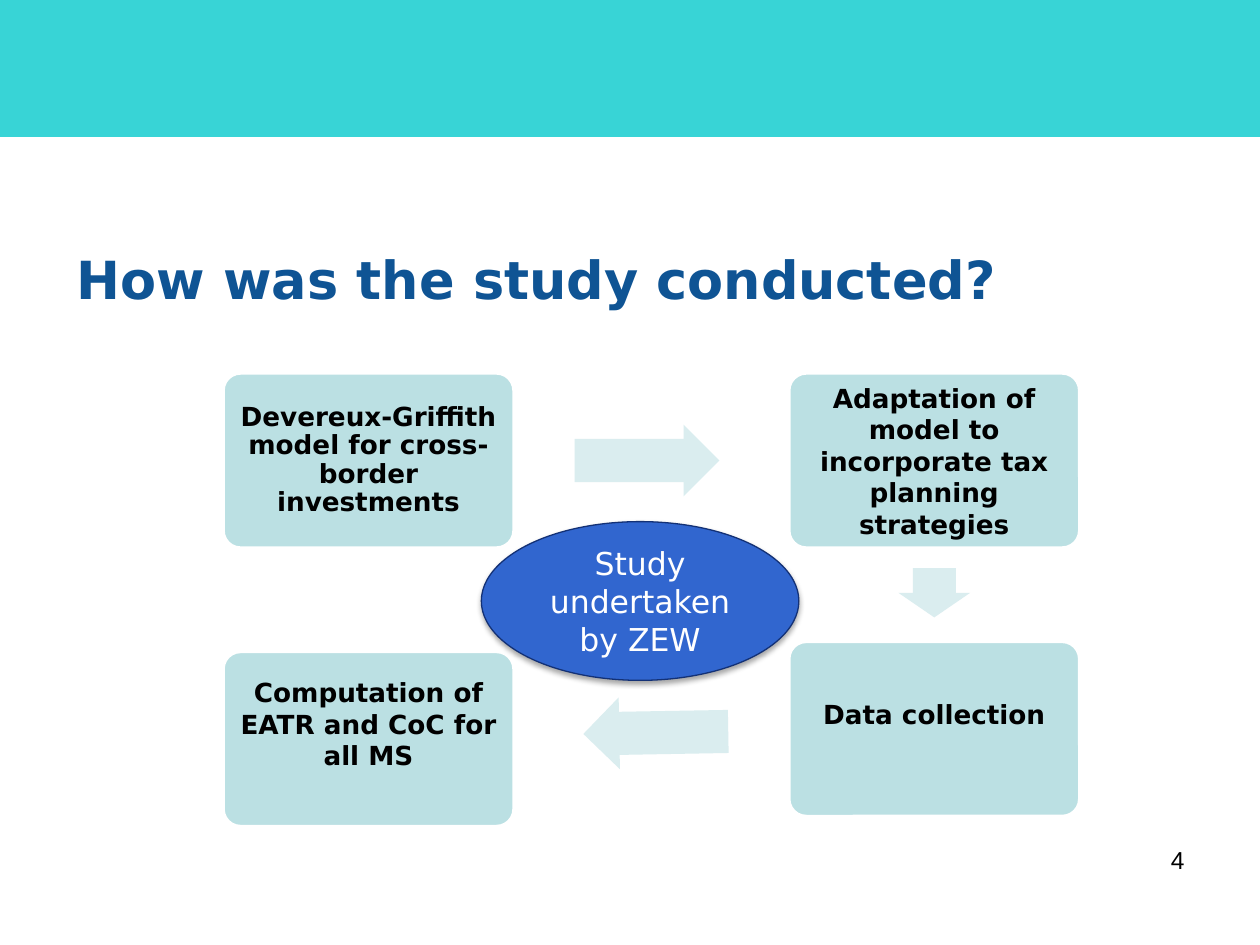
from lxml.etree import SubElement
from pptx import Presentation
from pptx.dml.color import RGBColor
from pptx.enum.shapes import MSO_SHAPE as SHAPE
from pptx.enum.text import MSO_ANCHOR as ANCHOR, PP_ALIGN as ALIGN
from pptx.oxml.ns import qn
from pptx.util import Inches, Pt

TURQUOISE = RGBColor(0x38, 0xD4, 0xD6)
TITLE_BLUE = RGBColor(0x0F, 0x54, 0x94)
BOX_TEAL = RGBColor(0xBB, 0xE0, 0xE3)
ARROW_TEAL = RGBColor(0xDA, 0xED, 0xEF)
OVAL_BLUE = RGBColor(0x31, 0x66, 0xCF)
OVAL_EDGE = RGBColor(0x13, 0x31, 0x76)
WHITE = RGBColor(0xFF, 0xFF, 0xFF)
BLACK = RGBColor(0, 0, 0)

FONT = "DejaVu Sans"
COLUMNS = (1.77, 6.26)
TOP_ROW = 2.96
BOX_W, BOX_H = 2.31, 1.39
INSET = 0.1
LIFT = 0.24  # extra bottom inset that raises the text of the lower boxes

# text, column, top, line spacing, extra bottom inset
STEPS = [
    ("Devereux-Griffith model for cross-border investments", 0, TOP_ROW, 0.9, 0),
    ("Adaptation of model to incorporate tax planning strategies", 1, TOP_ROW, 1.0, 0),
    ("Data collection", 1, 5.09, 1.0, LIFT),
    ("Computation of EATR and CoC for all MS", 0, 5.17, 1.0, LIFT),
]
# left, top, length, rotation
ARROWS = [(4.56, 3.37, 1.15, 0), (7.22, 4.42, 0.39, 90), (4.63, 5.53, 1.15, 179)]
ARROW_H = 0.57


def add_filled(slide, kind, box, fill, line=None, line_width=0.75):
    sp = slide.shapes.add_shape(kind, *map(Inches, box))
    sp.shadow.inherit = False
    sp.fill.solid()
    sp.fill.fore_color.rgb = fill
    if line is None:
        sp.line.fill.background()
    else:
        sp.line.color.rgb = line
        sp.line.width = Pt(line_width)
    return sp


def write(sp, text, size, color, align, bold=False, font=FONT):
    tf = sp.text_frame
    tf.word_wrap = True
    p = tf.paragraphs[0]
    p.alignment = align
    r = p.add_run()
    r.text = text
    r.font.size, r.font.name, r.font.bold = Pt(size), font, bold
    r.font.color.rgb = color
    return p


def add_title(slide, text):
    title = slide.shapes.title
    title.left, title.top, title.width, title.height = map(Inches, (0.51, 1.7, 9, 1.02))
    title.text_frame.vertical_anchor = ANCHOR.MIDDLE
    write(title, text, 30, TITLE_BLUE, ALIGN.LEFT, bold=True)


def add_step(slide, text, column, top, spacing, lift):
    sp = add_filled(slide, SHAPE.ROUNDED_RECTANGLE,
                    (COLUMNS[column], top, BOX_W, BOX_H), BOX_TEAL, WHITE, 2)
    sp.adjustments[0] = 0.1
    tf = sp.text_frame
    tf.vertical_anchor = ANCHOR.MIDDLE
    tf.margin_left = tf.margin_right = tf.margin_top = Inches(INSET)
    tf.margin_bottom = Inches(INSET + lift)
    p = write(sp, text, 15, BLACK, ALIGN.CENTER, bold=True)
    p.line_spacing = spacing


def add_arrow(slide, left, top, length, rotation):
    sp = add_filled(slide, SHAPE.RIGHT_ARROW, (left, top, length, ARROW_H), ARROW_TEAL)
    sp.adjustments[0], sp.adjustments[1] = 0.6, 0.5
    sp.rotation = rotation


def add_drop_shadow(sp):
    effects = sp._element.spPr.find(qn("a:effectLst"))
    shadow = SubElement(effects, qn("a:outerShdw"), blurRad=str(Pt(3.1)),
                        dist=str(Pt(1.8)), dir=str(90 * 60000), rotWithShape="0")
    color = SubElement(shadow, qn("a:srgbClr"), val=str(BLACK))
    SubElement(color, qn("a:alpha"), val="35000")


def add_center_oval(slide, text):
    sp = add_filled(slide, SHAPE.OVAL, (3.82, 4.14, 2.52, 1.26), OVAL_BLUE, OVAL_EDGE)
    add_drop_shadow(sp)
    sp.text_frame.vertical_anchor = ANCHOR.MIDDLE
    write(sp, text, 18, WHITE, ALIGN.CENTER)


def add_page_number(slide, number):
    box = slide.shapes.add_textbox(*map(Inches, (7.17, 6.66, 2.33, 0.52)))
    write(box, number, 14, BLACK, ALIGN.RIGHT, font="Arial")


def main():
    prs = Presentation()
    prs.slide_width, prs.slide_height = Inches(10), Inches(7.5)
    slide = prs.slides.add_slide(prs.slide_layouts.get_by_name("Title Only"))
    add_filled(slide, SHAPE.RECTANGLE, (0, 0, 10, 1.08), TURQUOISE, TURQUOISE)
    add_title(slide, "How was the study conducted?")
    for step in STEPS:
        add_step(slide, *step)
    for arrow in ARROWS:
        add_arrow(slide, *arrow)
    add_page_number(slide, "4")
    add_center_oval(slide, "Study undertaken by ZEW")
    prs.save("out.pptx")


if __name__ == "__main__":
    main()
